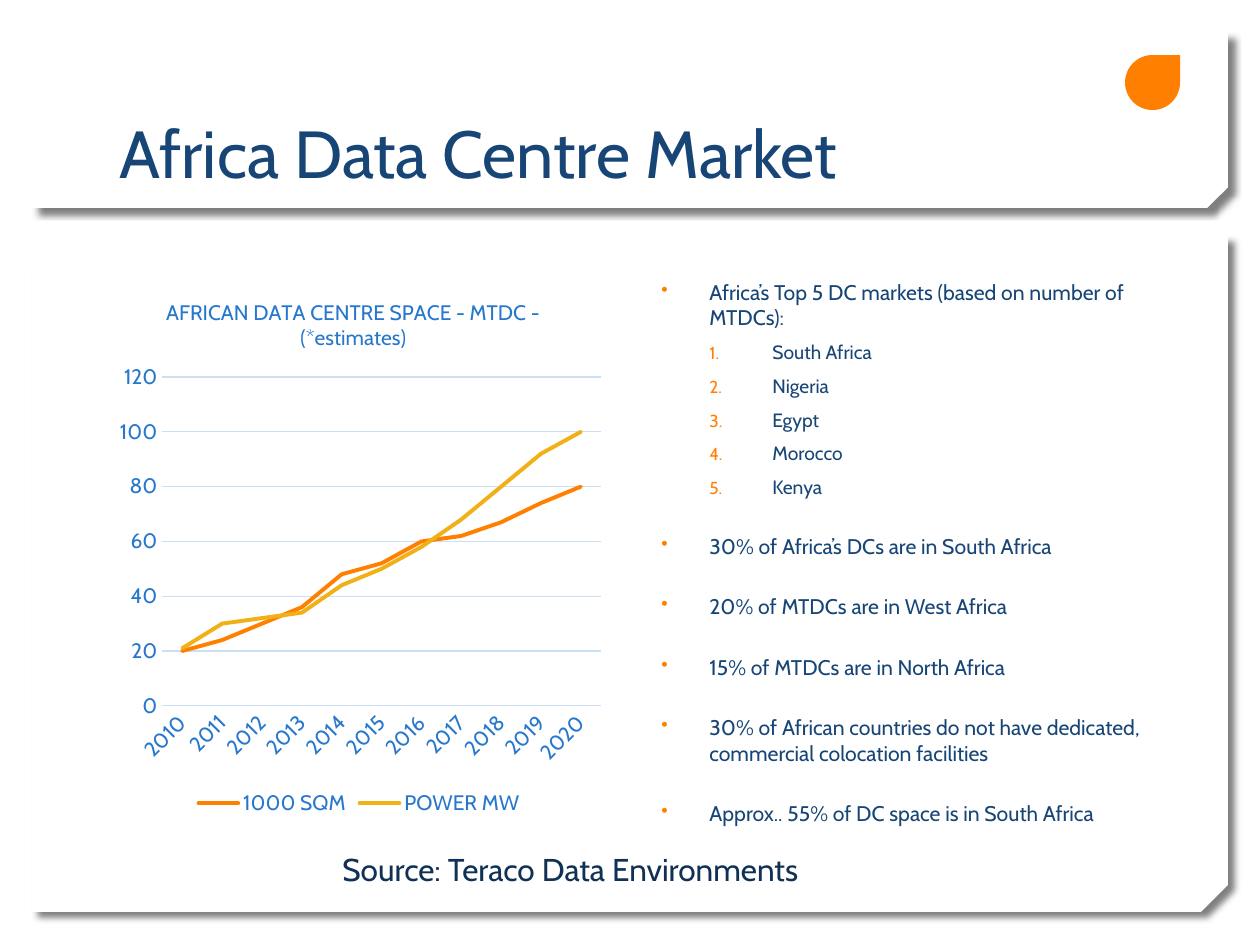
"""Build the Africa Data Centre Market slide with its growth chart and key facts."""
from lxml.etree import SubElement
from pptx import Presentation
from pptx.chart.data import CategoryChartData
from pptx.dml.color import RGBColor
from pptx.enum.chart import XL_CHART_TYPE as ChartType, XL_LEGEND_POSITION as LegendPos
from pptx.enum.chart import XL_TICK_MARK as Tick
from pptx.enum.shapes import MSO_SHAPE as Shape
from pptx.enum.text import MSO_ANCHOR as Anchor, PP_ALIGN as Align
from pptx.oxml.ns import qn
from pptx.util import Pt

PX = 914400 / 126
COLORS = {"navy": "174576", "ink": "103154", "blue": "2777CD", "grid": "CBE0F5",
          "orange": "FF7F01", "gold": "F1B015", "white": "FFFFFF", "shadow": "000000"}


def box(*lengths):
    return [round(length * PX) for length in lengths]


def style(font, size, color):
    font.name, font.size, font.bold = "Cabin", Pt(size), False
    font.color.rgb = RGBColor.from_string(COLORS[color])


deck = Presentation()
deck.slide_width, deck.slide_height = box(1260, 945)
slide = deck.slides.add_slide(deck.slide_layouts[5])

for top, height, snip in ((236, 676, 0.04), (32, 176, 0.117)):
    panel = slide.shapes.add_shape(Shape.SNIP_2_DIAG_RECTANGLE, *box(32, top, 1196, height))
    panel.adjustments[0], panel.adjustments[1] = 0, snip
    panel.fill.solid()
    panel.fill.fore_color.rgb = RGBColor.from_string(COLORS["white"])
    panel.line.fill.background()
    panel.shadow.inherit = False
    properties = panel.element.spPr
    properties.find(qn("a:xfrm")).set("flipV", "1")
    shadow = SubElement(properties.find(qn("a:effectLst")), qn("a:outerShdw"),
                        blurRad=str(Pt(4)), dist=str(Pt(5)), dir="2700000",
                        algn="tl", rotWithShape="0")
    tint = SubElement(shadow, qn("a:srgbClr"), val=COLORS["shadow"])
    SubElement(tint, qn("a:alpha"), val="50000")

drop = slide.shapes.add_shape(Shape.TEAR, *box(1125, 55, 55, 55))
drop.fill.solid()
drop.fill.fore_color.rgb = RGBColor.from_string(COLORS["orange"])
drop.line.fill.background()
drop.shadow.inherit = False

title = slide.shapes.title
title.element.getparent().append(title.element)
title.left, title.top, title.width, title.height = box(107, 40, 1045, 158)
title.text_frame.text = "Africa Data Centre Market"
title.text_frame.vertical_anchor = Anchor.BOTTOM
heading = title.text_frame.paragraphs[0]
heading.alignment = Align.LEFT
style(heading.font, 38, "navy")

facts = [
    (0, "Africa’s Top 5 DC markets (based on number of MTDCs):"),
    (1, "South Africa"),
    (1, "Nigeria"),
    (1, "Egypt"),
    (1, "Morocco"),
    (1, "Kenya"),
    (0, "30% of Africa’s DCs are in South Africa"),
    (0, "20% of MTDCs are in West Africa"),
    (0, "15% of MTDCs are in North Africa"),
    (0, "30% of African countries do not have dedicated, commercial colocation facilities"),
    (0, "Approx.. 55% of DC space is in South Africa"),
]
levels = [
    {"indent": (48, -48), "size": 12.1, "before": 20, "bullet": ("a:buChar", {"char": "•"})},
    {"indent": (111, -63), "size": 11, "before": 6,
     "bullet": ("a:buAutoNum", {"type": "arabicPeriod"})},
]
fact_frame = slide.shapes.add_textbox(*box(649, 273, 504, 548)).text_frame
fact_frame.word_wrap = True
for index, (level, wording) in enumerate(facts):
    fact = fact_frame.add_paragraph() if index else fact_frame.paragraphs[0]
    fact.text, fact.level = wording, level
    look = levels[level]
    layout = fact._p.get_or_add_pPr()
    margin, hanging = box(*look["indent"])
    layout.set("marL", str(margin))
    layout.set("indent", str(hanging))
    SubElement(SubElement(layout, qn("a:buClr")), qn("a:srgbClr"), val=COLORS["orange"])
    SubElement(layout, qn("a:buSzPct"), val="90000")
    tag, attributes = look["bullet"]
    SubElement(layout, qn(tag), **attributes)
    fact.space_before = Pt(look["before"] if index else 0)
    style(fact.font, look["size"], "navy")

growth = CategoryChartData()
growth.categories = [str(year) for year in range(2010, 2021)]
growth.add_series("1000 SQM", (20, 24, 30, 36, 48, 52, 60, 62, 67, 74, 80))
growth.add_series("POWER MW", (21, 30, 32, 34, 44, 50, 58, 68, 80, 92, 100))
chart = slide.shapes.add_chart(ChartType.LINE, *box(107, 273, 504, 548), growth).chart
style(chart.font, 10, "ink")

chart.has_title = True
chart.chart_title.text_frame.text = "AFRICAN DATA CENTRE SPACE - MTDC -\n(*estimates)"
for caption in chart.chart_title.text_frame.paragraphs:
    style(caption.font, 12, "blue")
chart.chart_title.include_in_layout = False

chart.has_legend = True
chart.legend.position = LegendPos.BOTTOM
chart.legend.include_in_layout = False
style(chart.legend.font, 12, "blue")

years, amounts = chart.category_axis, chart.value_axis
for axis in (years, amounts):
    axis.major_tick_mark = axis.minor_tick_mark = Tick.NONE
    style(axis.tick_labels.font, 12, "blue")
amounts.minimum_scale, amounts.maximum_scale, amounts.major_unit = 0, 120, 20
amounts.format.line.fill.background()
for rule in (years.format.line, amounts.major_gridlines.format.line):
    rule.color.rgb = RGBColor.from_string(COLORS["grid"])
    rule.width = Pt(0.75)
years.tick_labels.font
chart.element.find(f".//{qn('c:catAx')}/{qn('c:txPr')}/{qn('a:bodyPr')}").set("rot", "-2700000")

plot = chart.plots[0]
plot.vary_by_categories = False
for series, color in zip(plot.series, ("orange", "gold")):
    series.smooth = False
    series.format.line.color.rgb = RGBColor.from_string(COLORS[color])
    series.format.line.width = Pt(2.25)
    series.format.line._get_or_add_ln().set("cap", "rnd")

placements = (
    ("c:title", 1, {"xMode": "edge", "yMode": "edge", "x": 0.11, "y": 0.04}),
    ("c:plotArea", 0, {"layoutTarget": "inner", "xMode": "edge", "yMode": "edge",
                       "x": 0.11, "y": 0.19, "w": 0.87, "h": 0.6}),
)
for tag, position, settings in placements:
    part = chart.element.find(f".//{qn(tag)}")
    for automatic in part.findall(qn("c:layout")):
        part.remove(automatic)
    placement = SubElement(part, qn("c:layout"))
    part.insert(position, placement)
    manual = SubElement(placement, qn("c:manualLayout"))
    for setting, value in settings.items():
        SubElement(manual, qn(f"c:{setting}"), val=str(value))

source_frame = slide.shapes.add_textbox(*box(330, 844, 638, 50)).text_frame
source_frame.word_wrap = True
source_frame.text = "Source: Teraco Data Environments"
style(source_frame.paragraphs[0].font, 18, "ink")

deck.save("out.pptx")
